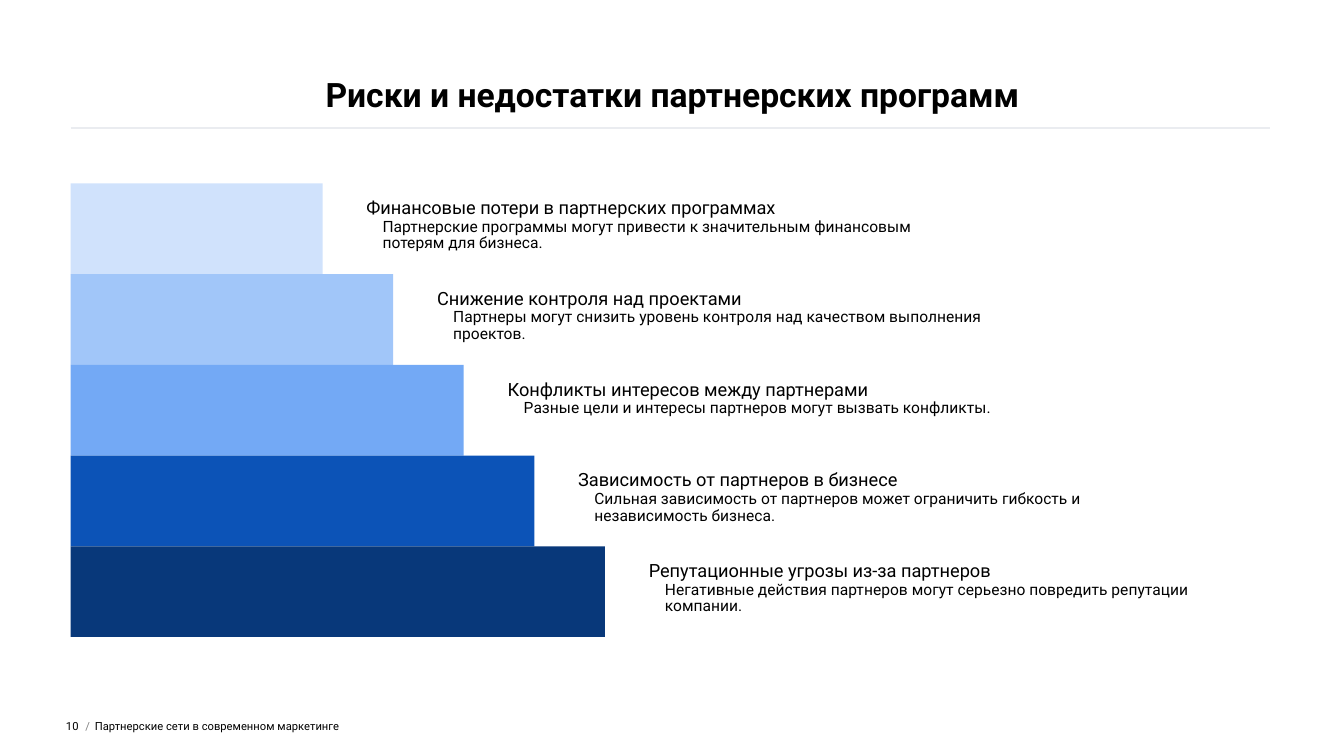
"""Builds a slide with a five-step staircase of partner programme risks."""
from dataclasses import dataclass

from pptx import Presentation
from pptx.dml.color import RGBColor
from pptx.enum.shapes import MSO_CONNECTOR as Connector, MSO_SHAPE as Preset
from pptx.enum.text import MSO_ANCHOR as Anchor, MSO_AUTO_SIZE as AutoSize, PP_ALIGN as Align
from pptx.oxml import parse_xml
from pptx.oxml.ns import nsdecls
from pptx.shapes.base import BaseShape
from pptx.slide import Slide
from pptx.text.text import TextFrame
from pptx.util import Emu, Inches, Pt

CELL = Inches(0.1)
MARGIN = 7
STAIR_TOP = 18.2
STEP_HEIGHT = 9
FIRST_WIDTH = 25
WIDTH_GAIN = 7
TEXT_GAP = 4.35
TEXT_DROP = 1.55
FONT = "Roboto"
COLORS = {
    "text": "000000",
    "slash": "808080",
    "rule": "EAECF0",
    "pale": "D0E2FC",
    "light": "A1C6F9",
    "medium": "73A9F5",
    "strong": "0C53B7",
    "dark": "08387A",
}


@dataclass(frozen=True)
class Step:
    heading: str
    detail: str
    color: str


@dataclass(frozen=True)
class FooterPart:
    text: str
    left: float
    width: float
    color: str = "text"
    align: Align = Align.LEFT
    before: float = 10


STEPS = [
    Step("Финансовые потери в партнерских программах",
         "Партнерские программы могут привести к значительным финансовым потерям для бизнеса.",
         "pale"),
    Step("Снижение контроля над проектами",
         "Партнеры могут снизить уровень контроля над качеством выполнения проектов.",
         "light"),
    Step("Конфликты интересов между партнерами",
         "Разные цели и интересы партнеров могут вызвать конфликты.",
         "medium"),
    Step("Зависимость от партнеров в бизнесе",
         "Сильная зависимость от партнеров может ограничить гибкость и независимость бизнеса.",
         "strong"),
    Step("Репутационные угрозы из-за партнеров",
         "Негативные действия партнеров могут серьезно повредить репутации компании.",
         "dark"),
]
FOOTER = [
    FooterPart("10", 4.7, 3.1, align=Align.RIGHT),
    FooterPart(" /", 8.2, 1.2, color="slash", before=0),
    FooterPart("Партнерские сети в современном маркетинге", 9.4, 86.1),
]


def cells(count: float) -> Emu:
    return Emu(round(count * CELL))


def rgb(name: str) -> RGBColor:
    return RGBColor.from_string(COLORS[name])


def place(shape: BaseShape, left: float, top: float, width: float, height: float) -> None:
    shape.left, shape.top = cells(left), cells(top)
    shape.width, shape.height = cells(width), cells(height)


def prepare_frame(frame: TextFrame, anchor: Anchor) -> TextFrame:
    frame.word_wrap = True
    frame.auto_size = AutoSize.NONE
    frame.vertical_anchor = anchor
    frame.margin_left = frame.margin_right = frame.margin_top = frame.margin_bottom = 0
    return frame


def add_box(slide: Slide, left: float, top: float, width: float, height: float,
            anchor: Anchor = Anchor.TOP) -> TextFrame:
    box = slide.shapes.add_textbox(cells(left), cells(top), cells(width), cells(height))
    return prepare_frame(box.text_frame, anchor)


def write(frame: TextFrame, text: str, *, size: float, color: str = "text",
          bold: bool = False, align: Align = Align.LEFT, before: float = 0,
          spacing: float = 1.0, indent: float = 0) -> None:
    paragraph = frame.add_paragraph() if frame.text else frame.paragraphs[0]
    paragraph.alignment = align
    paragraph.space_before = Pt(before)
    paragraph.line_spacing = spacing
    if indent:
        properties = paragraph._p.get_or_add_pPr()
        properties.set("marL", str(cells(indent)))
        properties.set("indent", "0")
    run = paragraph.add_run()
    run.text = text
    run.font.name = FONT
    run.font.size = Pt(size)
    run.font.bold = bold
    run.font.color.rgb = rgb(color)


def add_title(slide: Slide, text: str) -> None:
    title = slide.shapes.title
    place(title, MARGIN, 0, 119.4, 11.3)
    write(prepare_frame(title.text_frame, Anchor.BOTTOM), text,
          size=24, bold=True, align=Align.CENTER, before=10)


def add_rule(slide: Slide) -> None:
    rule = slide.shapes.add_connector(
        Connector.STRAIGHT, cells(MARGIN), cells(12.7), cells(126), cells(12.7))
    rule.line.color.rgb = rgb("rule")
    rule.line.width = Pt(2)
    rule._element.spPr.append(parse_xml(f"<a:effectLst {nsdecls('a')}/>"))


def add_step(slide: Slide, index: int, step: Step) -> None:
    top = STAIR_TOP + index * STEP_HEIGHT
    width = FIRST_WIDTH + index * WIDTH_GAIN
    bar = slide.shapes.add_shape(
        Preset.RECTANGLE, cells(MARGIN), cells(top), cells(width), cells(STEP_HEIGHT))
    bar.shadow.inherit = False
    bar.fill.solid()
    bar.fill.fore_color.rgb = rgb(step.color)
    bar.line.fill.background()
    frame = add_box(slide, MARGIN + width + TEXT_GAP, top + TEXT_DROP, 58, 6)
    write(frame, step.heading, size=13, spacing=0.9)
    write(frame, step.detail, size=11.1, spacing=0.9, indent=1.6)


def add_footer(slide: Slide) -> None:
    for part in FOOTER:
        frame = add_box(slide, part.left, 69, part.width, 6, Anchor.MIDDLE)
        write(frame, part.text, size=8, color=part.color, align=part.align,
              before=part.before)


def main() -> None:
    presentation = Presentation()
    presentation.slide_width, presentation.slide_height = Inches(13.33), Inches(7.5)
    slide = presentation.slides.add_slide(presentation.slide_layouts.get_by_name("Title Only"))
    add_title(slide, "Риски и недостатки партнерских программ")
    add_rule(slide)
    for index, step in enumerate(STEPS):
        add_step(slide, index, step)
    add_footer(slide)
    presentation.save("out.pptx")


if __name__ == "__main__":
    main()
